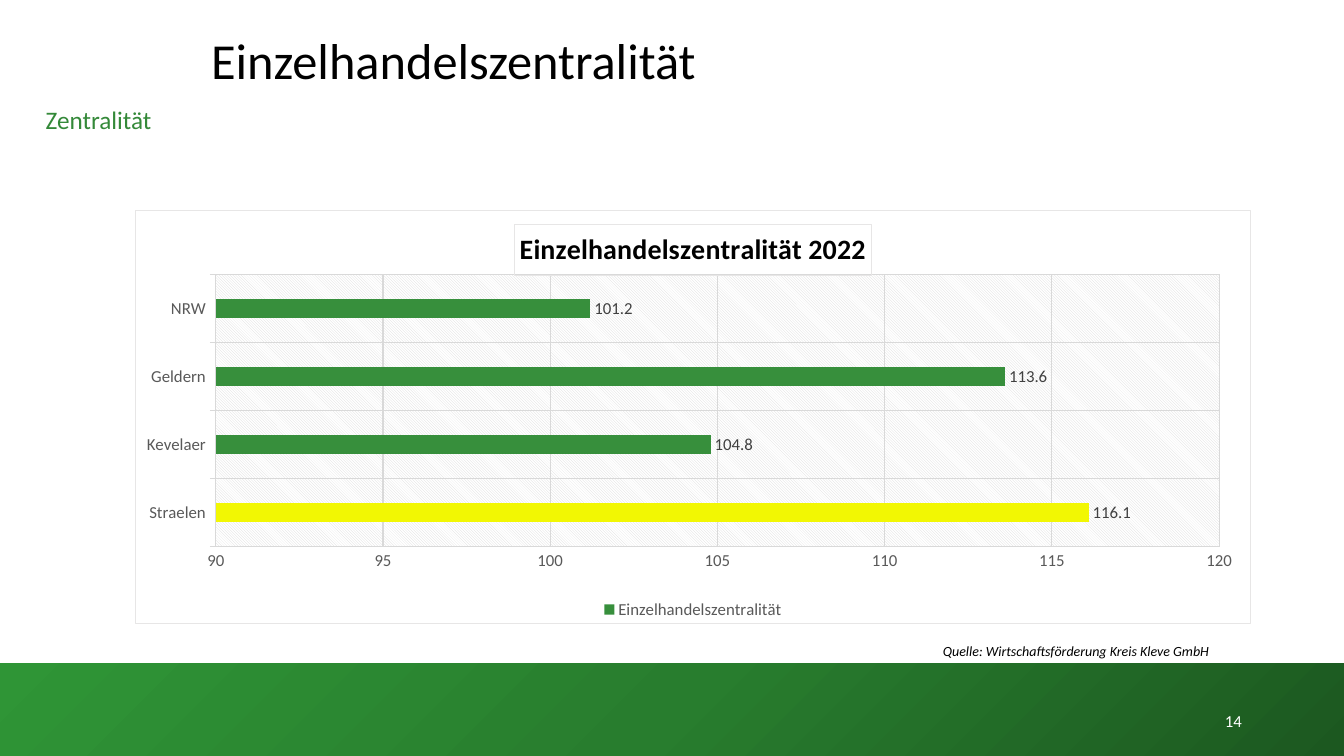
from lxml import etree
from pptx import Presentation
from pptx.chart import data
from pptx.dml import color
from pptx.enum import chart as charts, shapes, text
from pptx.oxml import parse_xml
from pptx.oxml import ns
from pptx import util as u

SCALE = 12192000 / 1344
COLORS = {
    "black": "000000", "white": "FFFFFF", "heading": "348939",
    "bar": "378F3C", "highlight": "F2F703", "axis": "595959",
    "label": "404040", "grid": "D9D9D9", "border": "E7E6E6",
    "band_dark": "1C5820", "band_mid": "287D2E", "band_light": "2F9536",
}
NAMESPACES = ns.nsdecls("c", "a")


def set_font(font, color_name, **values):
    for name, value in {"name": "Calibri", **values}.items():
        setattr(font, name, value)
    font.color.rgb = color.RGBColor.from_string(COLORS[color_name])


def set_line(line, color_name):
    line.width = u.Pt(0.75)
    line.color.rgb = color.RGBColor.from_string(COLORS[color_name])


presentation = Presentation()
presentation.slide_width = round(1344 * SCALE)
presentation.slide_height = round(756 * SCALE)
slide = presentation.slides.add_slide(presentation.slide_layouts[5])

band_box = [round(value * SCALE) for value in (0, 663, 1344, 93)]
band = slide.shapes.add_shape(shapes.MSO_SHAPE.RECTANGLE, *band_box)
band.shadow.inherit = False
band.line.fill.background()
band.fill.gradient()
band.fill.gradient_angle = 135
stops = band.element.spPr.find(ns.qn("a:gradFill")).find(ns.qn("a:gsLst"))
for stop in list(stops):
    stops.remove(stop)
for position, name in ((0, "band_dark"), (50, "band_mid"), (100, "band_light")):
    stop = etree.SubElement(stops, ns.qn("a:gs"), pos=str(position * 1000))
    etree.SubElement(stop, ns.qn("a:srgbClr"), val=COLORS[name])

TOP, MIDDLE = text.MSO_ANCHOR.TOP, text.MSO_ANCHOR.MIDDLE
LEFT, CENTER, RIGHT = text.PP_ALIGN.LEFT, text.PP_ALIGN.CENTER, text.PP_ALIGN.RIGHT
FIXED, GROW = text.MSO_AUTO_SIZE.NONE, text.MSO_AUTO_SIZE.SHAPE_TO_FIT_TEXT
texts = [
    ("Einzelhandelszentralität", (201, 31, 1083, 88), 36, "black", LEFT, TOP, FIXED),
    ("Zentralität", (28, 99, 141, 40), 18, "heading", CENTER, TOP, GROW),
    ("14", (950, 701, 302, 40), 12, "white", RIGHT, MIDDLE, FIXED),
    ("Quelle: Wirtschaftsförderung Kreis Kleve GmbH", (933, 638, 350, 27),
     10, "black", LEFT, TOP, GROW),
]
for content, box, size, color_name, alignment, anchor, auto_size in texts:
    is_title = size == 36
    lengths = [round(value * SCALE) for value in box]
    shape = slide.shapes.title if is_title else slide.shapes.add_textbox(*lengths)
    for name, value in zip(("left", "top", "width", "height"), lengths):
        setattr(shape, name, value)
    frame = shape.text_frame
    frame.text = content
    frame_format = {"word_wrap": True, "vertical_anchor": anchor, "auto_size": auto_size}
    for name, value in frame_format.items():
        setattr(frame, name, value)
    paragraph = frame.paragraphs[0]
    paragraph.alignment = alignment
    paragraph.line_spacing = 0.9 if is_title else 1.0
    set_font(paragraph.runs[0].font, color_name, size=u.Pt(size), italic=size == 10)

chart_data = data.CategoryChartData()
chart_data.categories = ["Straelen", "Kevelaer", "Geldern", "NRW"]
chart_data.add_series("Einzelhandelszentralität", [116.1, 104.8, 113.6, 101.2])
chart_box = [round(value * SCALE) for value in (135, 210, 1116, 414)]
chart = slide.shapes.add_chart(
    charts.XL_CHART_TYPE.BAR_CLUSTERED, *chart_box, chart_data).chart
set_font(chart.font, "black", size=u.Pt(10))

chart.has_title = True
chart_title = chart.chart_title
chart_title.text_frame.text = "Einzelhandelszentralität 2022"
set_font(chart_title.text_frame.paragraphs[0].runs[0].font, "black",
         size=u.Pt(20), bold=True)
set_line(chart_title.format.line, "border")

chart.has_legend = True
chart.legend.position = charts.XL_LEGEND_POSITION.BOTTOM
chart.legend.include_in_layout = False
set_font(chart.legend.font, "axis", size=u.Pt(12))

for axis in (chart.category_axis, chart.value_axis):
    axis.has_major_gridlines = True
    axis.minor_tick_mark = charts.XL_TICK_MARK.NONE
    set_line(axis.major_gridlines.format.line, "grid")
    set_font(axis.tick_labels.font, "axis", size=u.Pt(12))
chart.category_axis.major_tick_mark = charts.XL_TICK_MARK.OUTSIDE
set_line(chart.category_axis.format.line, "grid")
value_format = {"minimum_scale": 90, "maximum_scale": 120, "major_unit": 5,
                "major_tick_mark": charts.XL_TICK_MARK.NONE}
for name, value in value_format.items():
    setattr(chart.value_axis, name, value)
chart.value_axis.format.line.fill.background()

plot = chart.plots[0]
plot_format = {"gap_width": 247, "overlap": -58, "vary_by_categories": False,
               "has_data_labels": True}
for name, value in plot_format.items():
    setattr(plot, name, value)
plot.data_labels.show_value = True
plot.data_labels.position = charts.XL_LABEL_POSITION.OUTSIDE_END
set_font(plot.data_labels.font, "label", size=u.Pt(12))
series = plot.series[0]
for part, name in ((series, "bar"), (series.points[0], "highlight")):
    part.format.fill.solid()
    part.format.fill.fore_color.rgb = color.RGBColor.from_string(COLORS[name])

chart_part = chart.element.find(ns.qn("c:chart"))
chart_part.addnext(parse_xml(
    f'<c:spPr {NAMESPACES}><a:solidFill><a:srgbClr val="{COLORS["white"]}"/></a:solidFill>'
    f'<a:ln w="9525"><a:solidFill><a:srgbClr val="{COLORS["border"]}"/></a:solidFill>'
    '</a:ln></c:spPr>'))
plot_area = chart_part.find(ns.qn("c:plotArea"))
plot_area.append(parse_xml(
    f'<c:spPr {NAMESPACES}><a:pattFill prst="ltDnDiag">'
    f'<a:fgClr><a:srgbClr val="{COLORS["grid"]}"/></a:fgClr>'
    f'<a:bgClr><a:srgbClr val="{COLORS["white"]}"/></a:bgClr>'
    '</a:pattFill><a:ln><a:noFill/></a:ln></c:spPr>'))
for old_layout in plot_area.findall(ns.qn("c:layout")):
    plot_area.remove(old_layout)
layout = etree.Element(ns.qn("c:layout"))
manual_layout = etree.SubElement(layout, ns.qn("c:manualLayout"))
layout_values = {"layoutTarget": "inner", "xMode": "edge", "yMode": "edge",
                 "x": "0.072", "y": "0.155", "w": "0.9", "h": "0.659"}
for name, value in layout_values.items():
    etree.SubElement(manual_layout, ns.qn(f"c:{name}"), val=value)
plot_area.insert(0, layout)

presentation.save("out.pptx")
